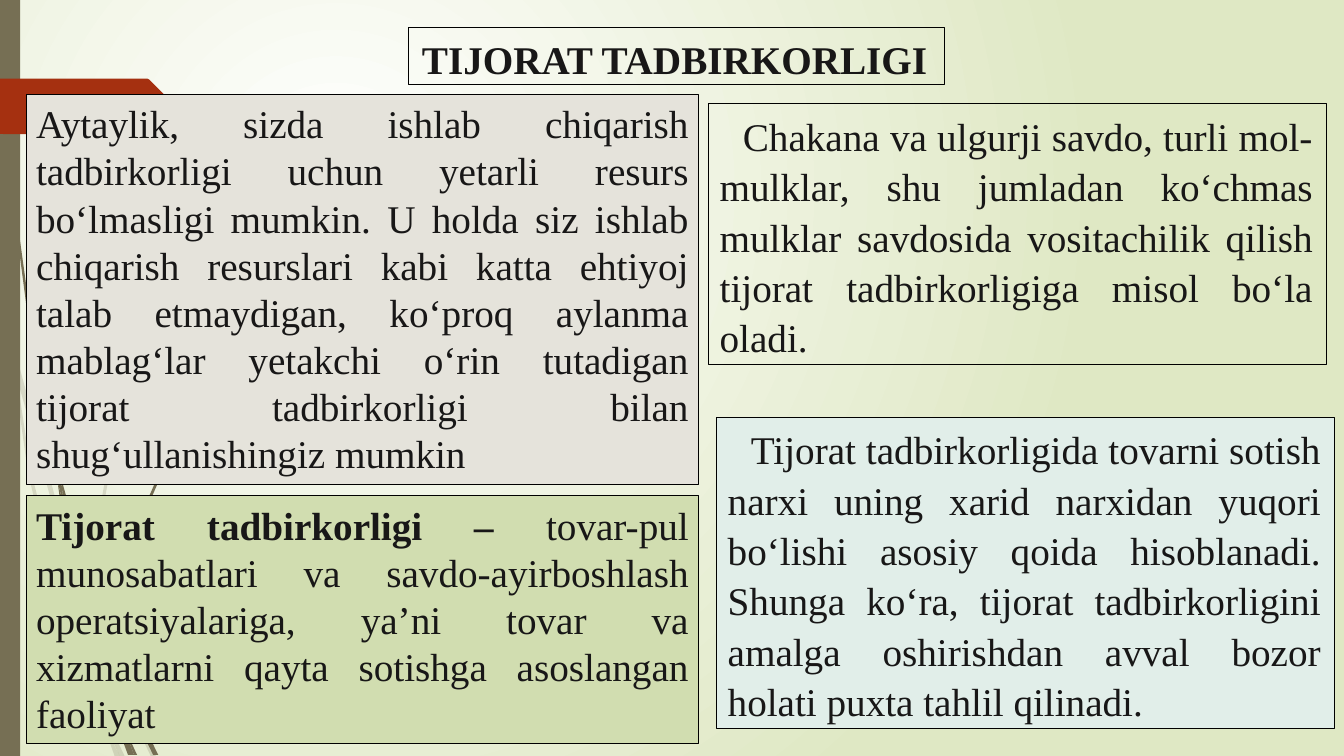
from lxml import etree
from pptx import Presentation
from pptx import util as u
from pptx.dml.color import RGBColor
from pptx.enum import shapes, text
from pptx.oxml.ns import qn

COLS, ROWS = 1333, 750
FONT, SIZE = "Times New Roman", 28
INK, BLACK, OLIVE, RED = "181717", "000000", "766F54", "A53010"

PALE_WISPS = [
    [(14, 345), (17, 376), (58, 522), (84, 599), (85, 586), (62, 520)],
    [(88, 596), (88, 610), (123, 694), (150, 751), (155, 751), (127, 692), (92, 607)],
    [(105, 711), (119, 751), (124, 751)],
    [(11, 350), (28, 470), (65, 621), (92, 693), (101, 714), (93, 683), (70, 619), (31, 469), (17, 376)],
    [(88, 584), (110, 462), (160, 349), (229, 245), (312, 154), (312, 153),
     (228, 244), (158, 348), (107, 461), (85, 584), (88, 596)],
    [(101, 714), (114, 751), (119, 751)],
    [(93, 683), (99, 707), (119, 751), (105, 711)],
]
DARK_WISPS = [
    [(3, 0), (7, 110), (17, 233), (33, 355), (57, 481), (55, 453), (36, 355), (19, 232), (8, 109), (4, 0)],
    [(60, 472), (64, 505), (88, 592), (106, 645), (106, 631), (93, 590)],
    [(110, 641), (111, 656), (132, 708), (152, 749), (157, 749), (136, 706)],
    [(57, 477), (68, 557), (93, 659), (117, 722), (110, 691), (98, 657), (72, 556), (64, 505)],
    [(122, 719), (133, 749), (136, 749)],
    [(55, 449), (57, 477), (64, 505), (60, 472)],
    [(111, 633), (125, 552), (158, 476), (205, 406), (261, 344), (260, 344),
     (204, 405), (156, 474), (122, 551), (106, 631), (110, 641)],
    [(117, 722), (127, 749), (131, 749)],
    [(110, 691), (117, 722), (130, 749), (133, 749), (122, 719)],
]
RIBBON = [(0, 78), (146, 78), (148, 79), (173, 104), (174, 106), (173, 108), (148, 133), (146, 134), (0, 133)]


def rgb(value):
    return RGBColor.from_string(value)


class Deck:
    """Holds the style, the grid and the current slide."""

    def __init__(self):
        self.prs = Presentation()
        self.prs.slide_width, self.prs.slide_height = u.Inches(13.33), u.Inches(7.5)
        self.cell_w = self.prs.slide_width / COLS
        self.cell_h = self.prs.slide_height / ROWS
        self.slide = self.prs.slides.add_slide(self.prs.slide_layouts[5])

    def background(self, inner, outer):
        fill = self.slide.background.fill
        fill.gradient()
        for stop, colour, position in zip(fill.gradient_stops, (inner, outer), (0, 1)):
            stop.color.rgb = rgb(colour)
            stop.position = position
        lin = next(self.slide.element.iter(qn("a:lin")))
        radial = etree.Element(qn("a:path"), {"path": "circle"})
        etree.SubElement(radial, qn("a:fillToRect"), l="50000", t="50000", r="100000", b="100000")
        lin.getparent().replace(lin, radial)

    def outline(self, points, colour, alpha=None):
        builder = self.slide.shapes.build_freeform(*points[0], scale=(self.cell_w, self.cell_h))
        builder.add_line_segments(points[1:], close=True)
        sp = builder.convert_to_shape()
        self.paint(sp, colour)
        if alpha:
            clr = next(sp.element.spPr.iter(qn("a:srgbClr")))
            etree.SubElement(clr, qn("a:alpha"), val=str(alpha * 1000))

    def paint(self, sp, fill, line=None):
        sp.shadow.inherit = False
        if fill:
            sp.fill.solid()
            sp.fill.fore_color.rgb = rgb(fill)
        else:
            sp.fill.background()
        if line:
            sp.line.color.rgb = rgb(line)
            sp.line.width = u.Pt(0.75)
        else:
            sp.line.fill.background()

    def rect(self, x, y, w, h, fill, line=None):
        sp = self.slide.shapes.add_shape(shapes.MSO_SHAPE.RECTANGLE, 0, 0, 0, 0)
        self.place(sp, x, y, w, h)
        self.paint(sp, fill, line)
        return sp

    def place(self, sp, x, y, w, h):
        sp.left, sp.width = round(x * self.cell_w), round(w * self.cell_w)
        sp.top, sp.height = round(y * self.cell_h), round(h * self.cell_h)

    def set_text(self, sp, runs, align, wrap=True, spacing=1.0, after=0, indent=0):
        tf = sp.text_frame
        tf.word_wrap = wrap
        tf.auto_size = text.MSO_AUTO_SIZE.NONE
        tf.vertical_anchor = text.MSO_ANCHOR.TOP
        p = tf.paragraphs[0]
        p.alignment, p.line_spacing, p.space_after = align, spacing, u.Pt(after)
        p.space_before = u.Pt(0)
        if spacing > 1:
            props = p._p.get_or_add_pPr()
            for key, inches in (("marL", 0.01), ("marR", 0.04), ("indent", indent)):
                props.set(key, str(u.Inches(inches)))
        for words, bold, italic in runs:
            r = p.add_run()
            r.text = words
            r.font.name, r.font.size = FONT, u.Pt(SIZE)
            r.font.bold, r.font.italic = bold, italic
            r.font.color.rgb = rgb(INK)

    def title(self, box, words):
        sp = self.slide.shapes.title
        self.place(sp, *box)
        self.paint(sp, None, BLACK)
        self.set_text(sp, [(words, True, False)], text.PP_ALIGN.CENTER, False, 1.07, 8, -0.01)

    def panel(self, box, fill, runs, **style):
        self.set_text(self.rect(*box, fill, BLACK), runs, text.PP_ALIGN.JUSTIFY, **style)


def main():
    deck = Deck()
    deck.background("FFFFFF", "DFE8C4")
    for wisp in PALE_WISPS:
        deck.outline(wisp, OLIVE, alpha=20)
    for wisp in DARK_WISPS:
        deck.outline(wisp, OLIVE)
    deck.rect(0, 0, 20, ROWS, OLIVE)
    deck.outline(RIBBON, RED)
    deck.title((405, 27, 532, 57), "TIJORAT TADBIRKORLIGI")
    deck.panel((26, 94, 667, 387), "E5E3DB", [(
        "Aytaylik, sizda ishlab chiqarish tadbirkorligi uchun yetarli resurs bo‘lmasligi mumkin. "
        "U holda siz ishlab chiqarish resurslari kabi katta ehtiyoj talab etmaydigan, ko‘proq aylanma "
        "mablag‘lar yetakchi o‘rin tutadigan tijorat tadbirkorligi bilan shug‘ullanishingiz mumkin",
        False, False)])
    deck.panel((26, 492, 667, 246), "D1DDB0", [
        ("Tijorat tadbirkorligi", True, False),
        (" – ", True, True),
        ("tovar-pul munosabatlari va savdo-ayirboshlash operatsiyalariga, ya’ni tovar va "
         "xizmatlarni qayta sotishga asoslangan faoliyat", False, False)])
    deck.panel((703, 103, 613, 259), None, [(
        "Chakana va ulgurji savdo, turli mol-mulklar, shu jumladan ko‘chmas mulklar savdosida "
        "vositachilik qilish tijorat tadbirkorligiga misol bo‘la oladi.", False, False)],
        spacing=1.07, after=3.8, indent=0.23)
    deck.panel((711, 414, 613, 309), "E1EEE9", [(
        "Tijorat tadbirkorligida tovarni sotish narxi uning xarid narxidan yuqori bo‘lishi asosiy "
        "qoida hisoblanadi. Shunga ko‘ra, tijorat tadbirkorligini amalga oshirishdan avval bozor "
        "holati puxta tahlil qilinadi.", False, False)],
        spacing=1.07, after=15.7, indent=0.23)
    deck.prs.save("out.pptx")


if __name__ == "__main__":
    main()
